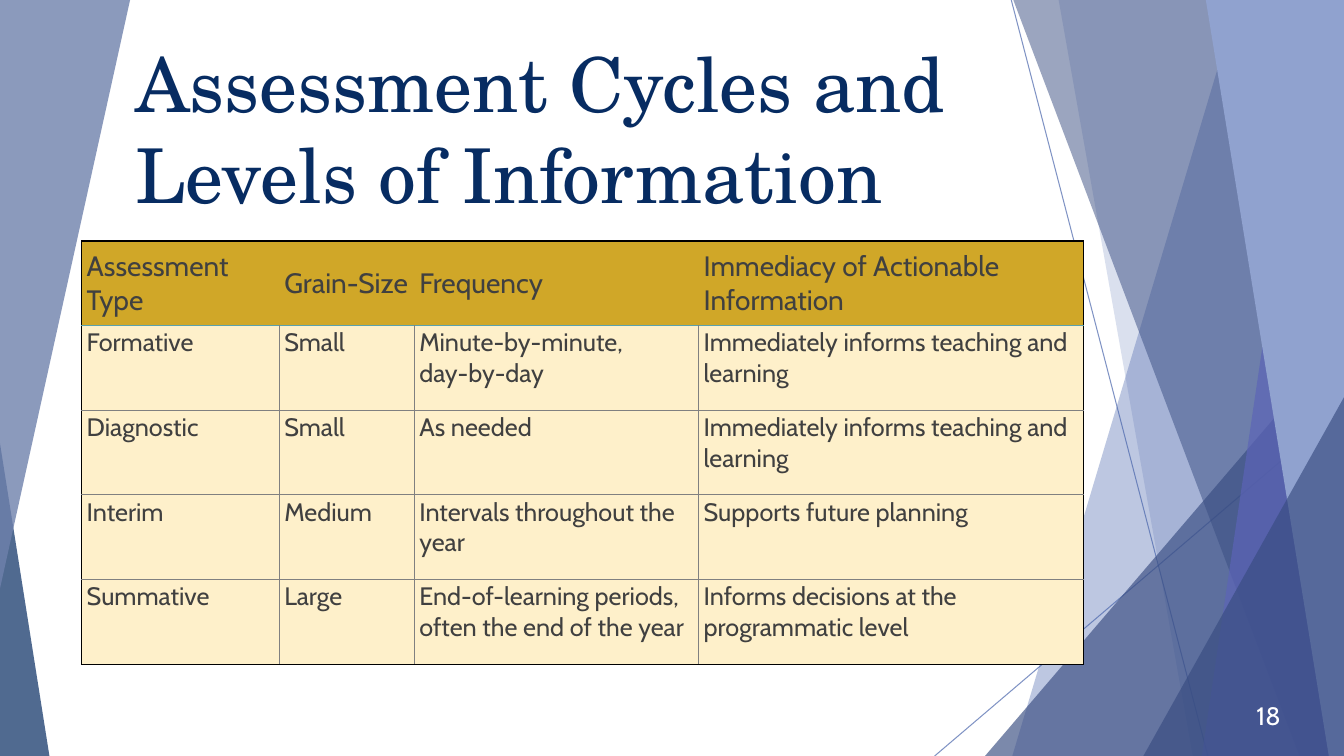
from pptx import Presentation
from pptx.dml.color import RGBColor
from pptx.enum.shapes import MSO_CONNECTOR, MSO_SHAPE
from pptx.enum.text import MSO_ANCHOR, MSO_AUTO_SIZE, PP_ALIGN
from pptx.oxml.ns import qn
from pptx.util import Pt
from lxml import etree

PX = 9144  # 100 px to the inch
WIDTH, HEIGHT = 1333, 750
TRIANGLE = MSO_SHAPE.ISOSCELES_TRIANGLE
STRAIGHT = MSO_CONNECTOR.STRAIGHT
TOP, MIDDLE = MSO_ANCHOR.TOP, MSO_ANCHOR.MIDDLE
COLORS = {
    "blue": "4A66AC", "deep blue": "384C81", "violet": "5C64B7",
    "light blue": "90A2CF", "navy": "072C62", "slate": "6F81AC",
    "gold": "D0A728", "cream": "FEF0CA", "text": "404040",
    "white": "FFFFFF", "black": "000000", "gray": "808080", "teal": "5AA2AE",
}
BODY_FONT, TITLE_FONT = "Cabin", "TeX Gyre Schola"


def finish_facet(shape, opacity):
    """Set the opacity in percent of a coloured shape or line and drop its shadow."""
    properties = shape._element.spPr
    for color in properties.iter(qn("a:srgbClr")):
        etree.SubElement(color, qn("a:alpha"), val=str(opacity * 1000))
    etree.SubElement(properties, qn("a:effectLst"))


def format_text(text_frame, size, font_name, color):
    for paragraph in text_frame.paragraphs:
        for run in paragraph.runs:
            for name, value in {"size": Pt(size), "name": font_name, "bold": False}.items():
                setattr(run.font, name, value)
            run.font.color.rgb = RGBColor.from_string(COLORS[color])


presentation = Presentation()
presentation.slide_width, presentation.slide_height = WIDTH * PX, HEIGHT * PX
slide = presentation.slides.add_slide(presentation.slide_layouts[5])
shapes = slide.shapes

# Background lines
for ends in [(1003, 0, 1198, HEIGHT), (WIDTH, 404, 927, HEIGHT)]:
    connector = shapes.add_connector(STRAIGHT, *[value * PX for value in ends])
    connector.line.color.rgb = RGBColor.from_string(COLORS["blue"])
    connector.line.width = Pt(0.75)
    finish_facet(connector, 70)

# Facets from back to front: (top x, bottom x) for bands that reach the right edge,
# (left, top, width, height, apex, flipped) for triangles
facets = [
    ((1228, 1004), "blue", 36),
    ((1050, 1183), "blue", 20),
    ((977, 334, 356, 416, 1, False), "deep blue", 66),
    ((1005, 1289), "deep blue", 50),
    ((1303, 1192), "violet", 70),
    ((1196, 1318), "light blue", 100),
    ((1134, 394, 199, 356, 1, False), "deep blue", 66),
    ((0, 440, 49, 310, 0, False), "navy", 70),
    ((0, 0, 129, 584, 0, True), "slate", 80),
]
for geometry, color, opacity in facets:
    if len(geometry) == 2:
        top_x, bottom_x = geometry
        builder = shapes.build_freeform(top_x, 0, scale=PX)
        builder.add_line_segments([(WIDTH, 0), (WIDTH, HEIGHT), (bottom_x, HEIGHT)])
        facet = builder.convert_to_shape()
    else:
        *box, apex, flipped = geometry
        facet = shapes.add_shape(TRIANGLE, *[value * PX for value in box])
        facet.adjustments[0] = apex
        if flipped:
            facet._element.spPr.xfrm.set("flipV", "1")
    facet.fill.solid()
    facet.fill.fore_color.rgb = RGBColor.from_string(COLORS[color])
    facet.line.fill.background()
    finish_facet(facet, opacity)

# Title
title = shapes.title
shapes._spTree.append(title._element)
title.left, title.top, title.width, title.height = [value * PX for value in (124, 32, 983, 144)]
title.text_frame.text = "Assessment Cycles and Levels of Information"
title.text_frame.auto_size = MSO_AUTO_SIZE.NONE
title.text_frame.vertical_anchor = TOP
title.text_frame.paragraphs[0].alignment = PP_ALIGN.LEFT
format_text(title.text_frame, 54, TITLE_FONT, "navy")

# Assessment table
rows = [
    ["Assessment Type", "Grain-Size", "Frequency", "Immediacy of Actionable Information"],
    ["Formative", "Small", "Minute-by-minute, \vday-by-day",
     "Immediately informs teaching and learning"],
    ["Diagnostic", "Small", "As needed", "Immediately informs teaching and learning"],
    ["Interim", "Medium", "Intervals throughout the year", "Supports future planning"],
    ["Summative", "Large", "End-of-learning periods, often the end of the year",
     "Informs decisions at the programmatic level"],
]
column_widths = [196, 134, 282, 382]
row_height = 84
last_row, last_column = len(rows) - 1, len(column_widths) - 1
table = shapes.add_table(len(rows), len(column_widths), 81 * PX, 239 * PX,
                         sum(column_widths) * PX, len(rows) * row_height * PX).table
table.first_row = table.horz_banding = False
for column, width in zip(table.columns, column_widths):
    column.width = width * PX

for row_index, texts in enumerate(rows):
    table.rows[row_index].height = row_height * PX
    header = row_index == 0
    inner = None if header else "gray"
    for column_index, text in enumerate(texts):
        cell = table.cell(row_index, column_index)
        cell.text = text
        cell_format = {
            "margin_left": 5 * PX, "margin_right": 5 * PX,
            "margin_top": 2 * PX, "margin_bottom": 2 * PX,
            "vertical_anchor": MIDDLE if header else TOP,
        }
        for name, value in cell_format.items():
            setattr(cell, name, value)
        format_text(cell.text_frame, 20 if header else 18, BODY_FONT, "text")
        borders = {
            "a:lnL": "black" if column_index == 0 else inner,
            "a:lnR": "black" if column_index == last_column else inner,
            "a:lnT": "black" if header else "teal" if row_index == 1 else "gray",
            "a:lnB": "teal" if header else "black" if row_index == last_row else "gray",
        }
        for tag, color in borders.items():
            border = etree.SubElement(cell._tc.tcPr, qn(tag), w=str(Pt(1)))
            if color:
                fill = etree.SubElement(border, qn("a:solidFill"))
                etree.SubElement(fill, qn("a:srgbClr"), val=COLORS[color])
            else:
                etree.SubElement(border, qn("a:noFill"))
        cell.fill.solid()
        cell.fill.fore_color.rgb = RGBColor.from_string(COLORS["gold" if header else "cream"])

# Slide number
number = shapes.add_textbox(*[value * PX for value in (1205, 690, 75, 40)]).text_frame
number.text = "18"
number.word_wrap = True
number.vertical_anchor = MIDDLE
number.paragraphs[0].alignment = PP_ALIGN.RIGHT
format_text(number, 18, BODY_FONT, "white")

presentation.save("out.pptx")
